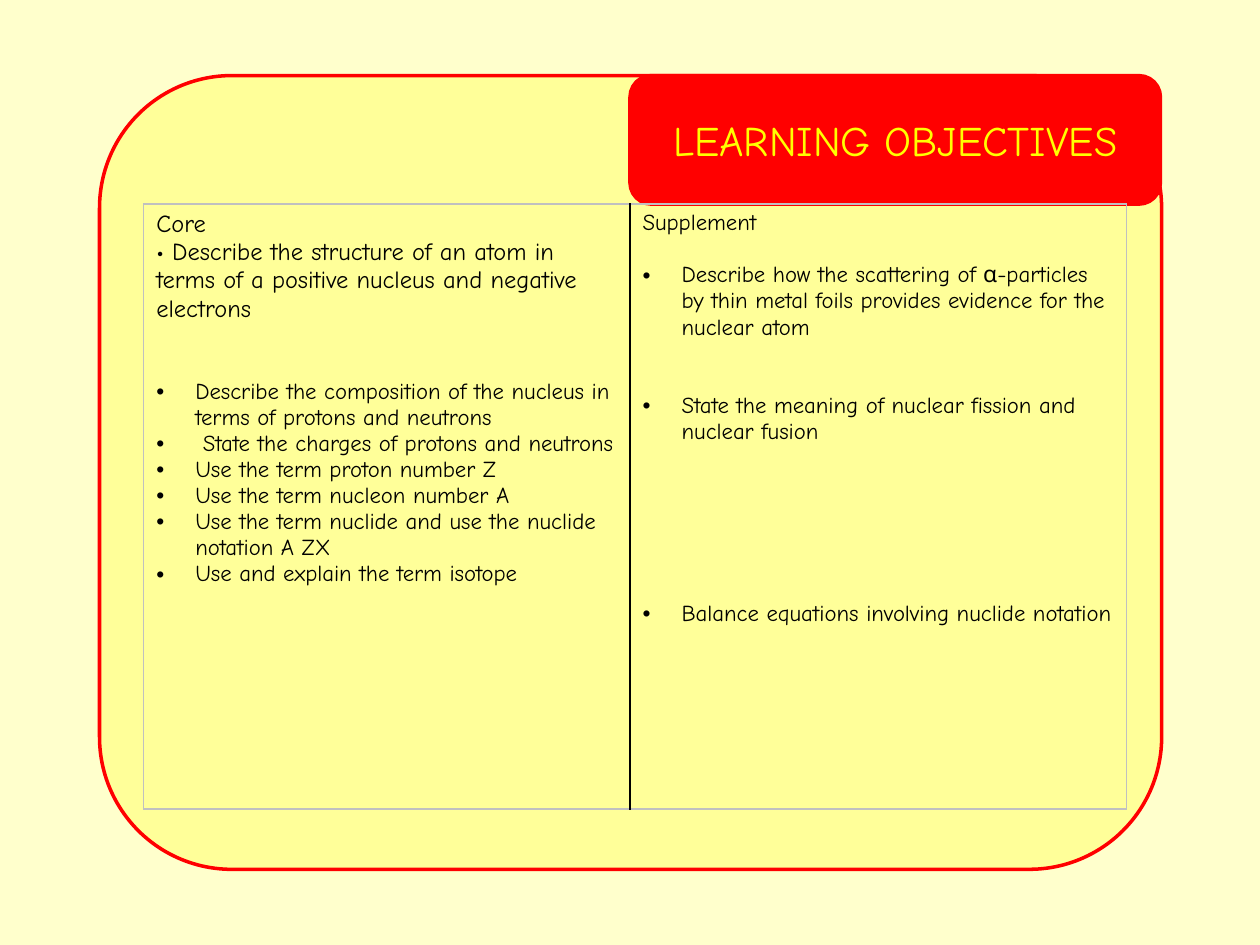
from dataclasses import dataclass

from lxml.etree import SubElement
from pptx import Presentation
from pptx.dml.color import RGBColor as RGB
from pptx.enum.shapes import MSO_SHAPE as SHAPE
from pptx.enum.text import MSO_ANCHOR as ANCHOR, PP_ALIGN as ALIGN
from pptx.oxml.ns import qn
from pptx.util import Inches, Pt


@dataclass(frozen=True)
class Theme:
    """Colours, font and type sizes of the slide."""
    page: str = "FFFFCC"
    panel: str = "FFFF99"
    accent: str = "FF0000"
    title: str = "FFFF00"
    text: str = "000000"
    frame: str = "C0C0C0"
    font: str = "Comic Neue"
    title_size: int = 24
    lead_size: int = 14
    body_size: int = 13


T = Theme()
LEAD, BODY = T.lead_size, T.body_size
LINE = 1.143
INDENT = Inches(0.31)

# Each paragraph: text, type size, bulleted, blank lines' worth of space before
CORE = [
    ("Core", LEAD, False, 0),
    ("• Describe the structure of an atom in terms of a positive nucleus "
     "and negative electrons", LEAD, False, 0),
    ("Describe the composition of the nucleus in terms of protons and neutrons",
     BODY, True, 2.15),
    (" State the charges of protons and neutrons", BODY, True, 0),
    ("Use the term proton number Z", BODY, True, 0),
    ("Use the term nucleon number A", BODY, True, 0),
    ("Use the term nuclide and use the nuclide notation A ZX", BODY, True, 0),
    ("Use and explain the term isotope", BODY, True, 0),
]
SUPPLEMENT = [
    ("Supplement", BODY, False, 0),
    ("Describe how the scattering of α-particles by thin metal foils provides "
     "evidence for the nuclear atom", BODY, True, 1),
    ("State the meaning of nuclear fission and nuclear fusion", BODY, True, 2),
    ("Balance equations involving nuclide notation", BODY, True, 6),
]


def style(p, size, color):
    """Format every run of a paragraph."""
    for r in p.runs:
        r.font.name, r.font.size = T.font, Pt(size)
        r.font.color.rgb = RGB.from_string(color)


def add_panel(s, box, fill):
    """Add a rounded panel with the accent outline."""
    sp = s.shapes.add_shape(SHAPE.ROUNDED_RECTANGLE, *box)
    sp.shadow.inherit = False
    sp.fill.solid()
    sp.fill.fore_color.rgb = RGB.from_string(fill)
    sp.line.color.rgb = RGB.from_string(T.accent)
    sp.line.width = Pt(2)


def add_title_tab(s, box, text):
    """Place the title placeholder on a filled tab."""
    add_panel(s, box, T.accent)
    sp = s.shapes.title
    s.shapes._spTree.append(sp._element)
    sp.left, sp.top, sp.width, sp.height = box
    tf = sp.text_frame
    tf.text = text
    tf.word_wrap, tf.vertical_anchor = True, ANCHOR.MIDDLE
    p = tf.paragraphs[0]
    p.alignment = ALIGN.CENTER
    style(p, T.title_size, T.title)


def set_borders(cell, **colors):
    """Draw 1 pt borders on a cell, one colour per side."""
    tc_pr = cell._tc.get_or_add_tcPr()
    for i, side in enumerate(("L", "R", "T", "B")):
        ln = tc_pr.makeelement(qn(f"a:ln{side}"), {"w": str(Pt(1))})
        fill = SubElement(ln, qn("a:solidFill"))
        SubElement(fill, qn("a:srgbClr"), val=colors.get(side, T.frame))
        tc_pr.insert(i, ln)


def fill_cell(cell, items):
    """Write a list of objectives into a cell."""
    tf = cell.text_frame
    cell.fill.background()
    for i, (text, size, bulleted, gap) in enumerate(items):
        p = tf.add_paragraph() if i else tf.paragraphs[0]
        p.text = text
        p.space_before = Pt(round(gap * size * LINE, 1))
        if bulleted:
            p_pr = p._p.get_or_add_pPr()
            p_pr.set("marL", str(INDENT))
            p_pr.set("indent", str(-INDENT))
            SubElement(p_pr, qn("a:buFont"), typeface="Arial")
            SubElement(p_pr, qn("a:buChar"), char="•")
        style(p, size, T.text)


def add_objectives(s, box, widths, columns):
    """Add the one-row table of objectives."""
    table = s.shapes.add_table(1, len(columns), *box).table
    table.first_row = table.horz_banding = False
    for i, (width, items) in enumerate(zip(widths, columns)):
        table.columns[i].width = Inches(width)
        fill_cell(table.cell(0, i), items)
    set_borders(table.cell(0, 0), R=T.text)
    set_borders(table.cell(0, 1), L=T.text)


def inches(*values):
    """Convert a box to lengths."""
    return [Inches(v) for v in values]


def main():
    """Build and save the slide."""
    prs = Presentation()
    prs.slide_width, prs.slide_height = inches(10, 7.5)
    s = prs.slides.add_slide(prs.slide_layouts[5])
    s.background.fill.solid()
    s.background.fill.fore_color.rgb = RGB.from_string(T.page)
    add_panel(s, inches(0.79, 0.6, 8.43, 6.3), T.panel)
    add_title_tab(s, inches(5, 0.6, 4.21, 1.02), "LEARNING OBJECTIVES")
    add_objectives(s, inches(1.14, 1.62, 7.8, 4.8), (3.86, 3.94),
                   (CORE, SUPPLEMENT))
    prs.save("out.pptx")


if __name__ == "__main__":
    main()
